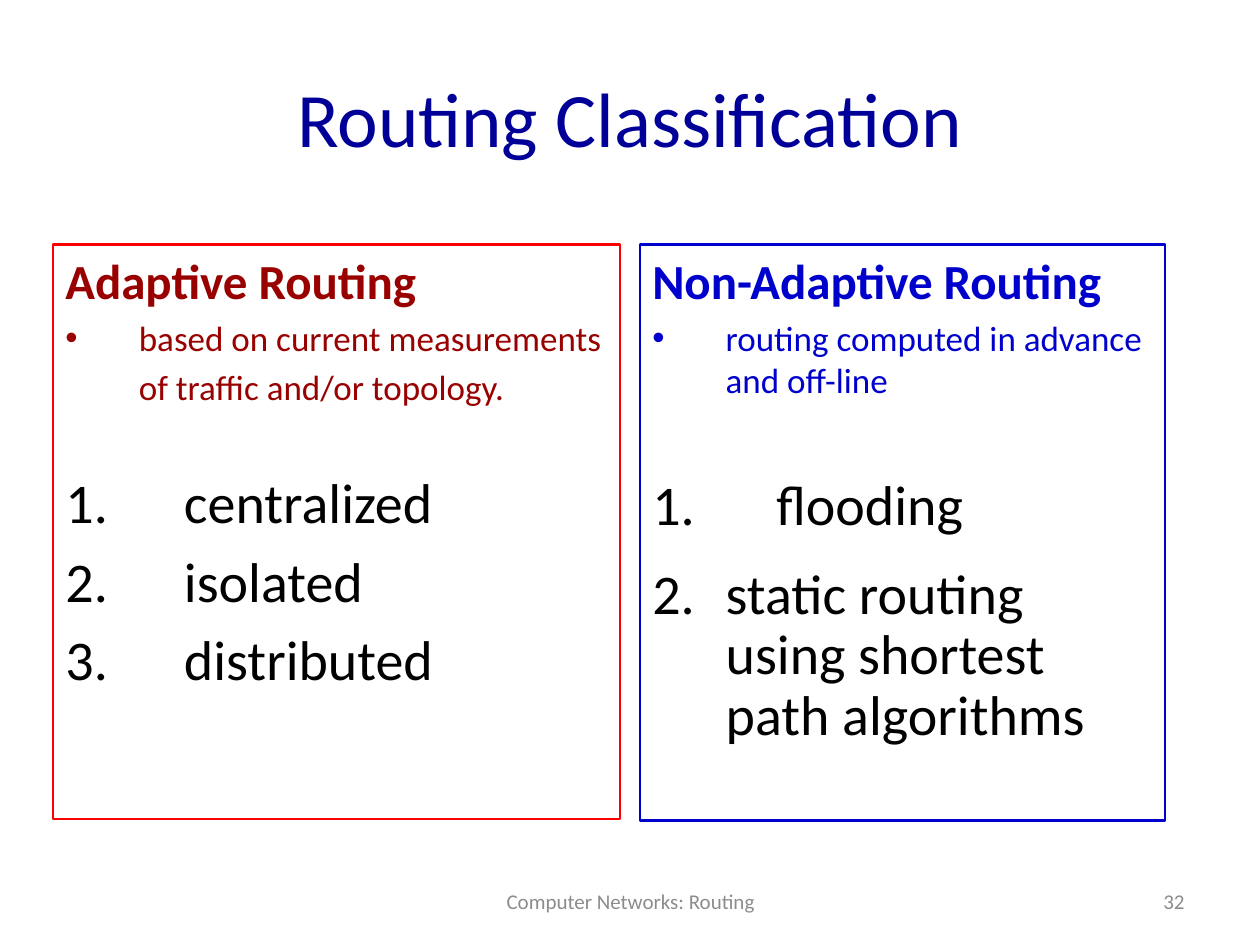
"""Build the Routing Classification slide with two outlined columns."""
from lxml import etree
from pptx import Presentation
from pptx.dml.color import RGBColor
from pptx.enum.shapes import MSO_SHAPE
from pptx.enum.text import MSO_ANCHOR, PP_ALIGN
from pptx.oxml.ns import qn
from pptx.util import Cm, Pt

RECTANGLE = MSO_SHAPE.RECTANGLE
TOP, MIDDLE = MSO_ANCHOR.TOP, MSO_ANCHOR.MIDDLE
LEFT, CENTER, RIGHT = PP_ALIGN.LEFT, PP_ALIGN.CENTER, PP_ALIGN.RIGHT
NAVY = RGBColor(0x00, 0x00, 0x99)
RED = RGBColor(0xFF, 0x00, 0x00)
DARK_RED = RGBColor(0x99, 0x00, 0x00)
BLUE = RGBColor(0x00, 0x00, 0xCC)
BLACK = RGBColor(0x00, 0x00, 0x00)
GRAY = RGBColor(0x8C, 0x8C, 0x8C)
INDENT = 1.48


def write(paragraph, text, size, color, bold=False, **layout):
    """Fill a paragraph with one run and apply its format values."""
    run = paragraph.add_run()
    run.text = text
    run.font.color.rgb = color
    for name, value in {"name": "Calibri", "size": Pt(size), "bold": bold}.items():
        setattr(run.font, name, value)
    for name, value in layout.items():
        setattr(paragraph, name, value)


def indent(paragraph, margin, bullet=None, number=None):
    """Give a paragraph a left margin and an optional hanging bullet or number."""
    properties = paragraph._p.get_or_add_pPr()
    properties.set("marL", str(Cm(margin)))
    properties.set("indent", str(-Cm(margin) if bullet or number else 0))
    if bullet:
        etree.SubElement(properties, qn("a:buFont"), typeface="Arial")
        etree.SubElement(properties, qn("a:buChar"), char=bullet)
    if number:
        etree.SubElement(properties, qn("a:buFont"), typeface="Calibri")
        etree.SubElement(properties, qn("a:buAutoNum"), type="arabicPeriod", startAt=str(number))


presentation = Presentation()
presentation.slide_width, presentation.slide_height = Cm(25.4), Cm(19.05)
slide = presentation.slides.add_slide(presentation.slide_layouts[5])

title = slide.shapes.title
for name, value in {"left": 1.27, "top": 0.76, "width": 22.86, "height": 3.18}.items():
    setattr(title, name, Cm(value))
title.text_frame.vertical_anchor = MIDDLE
write(title.text_frame.paragraphs[0], "Routing Classification", 44, NAVY, alignment=CENTER)

columns = [
    {
        "box": (1.07, 4.93, 11.43, 11.58), "line": RED, "color": DARK_RED,
        "heading": "Adaptive Routing",
        "notes": [("based on current measurements", "•"), ("of traffic and/or topology.", None)],
        "items": [("centralized", 2.39, 34.4), ("isolated", 2.39, 6.4), ("distributed", 2.39, 6.4)],
        "spacing": 1.0,
    },
    {
        "box": (12.9, 4.93, 10.59, 11.61), "line": BLUE, "color": BLUE,
        "heading": "Non-Adaptive Routing",
        "notes": [("routing computed in advance and off-line", "•")],
        "items": [("flooding", 2.5, 44), ("static routing using shortest path algorithms", INDENT, 16)],
        "spacing": 0.9,
    },
]

for column in columns:
    shape = slide.shapes.add_shape(RECTANGLE, *map(Cm, column["box"]))
    shape.shadow.inherit = False
    shape.fill.background()
    shape.line.color.rgb = column["line"]
    shape.line.width = Pt(1.5)
    frame = shape.text_frame
    frame.word_wrap = True
    frame.vertical_anchor = TOP
    write(frame.paragraphs[0], column["heading"], 28, column["color"], True, alignment=LEFT)
    for text, bullet in column["notes"]:
        paragraph = frame.add_paragraph()
        write(paragraph, text, 20, column["color"], alignment=LEFT, space_before=Pt(4))
        indent(paragraph, INDENT, bullet=bullet)
    for number, (text, margin, gap) in enumerate(column["items"], 1):
        paragraph = frame.add_paragraph()
        write(paragraph, text, 32, BLACK, alignment=LEFT,
              space_before=Pt(gap), line_spacing=column["spacing"])
        indent(paragraph, margin, number=number)

for text, left, width, alignment in [
    ("Computer Networks: Routing", 8.69, 8.05, CENTER),
    ("32", 18.21, 5.92, RIGHT),
]:
    box = slide.shapes.add_textbox(Cm(left), Cm(17.65), Cm(width), Cm(1.02))
    box.text_frame.word_wrap = True
    box.text_frame.vertical_anchor = MIDDLE
    write(box.text_frame.paragraphs[0], text, 12, GRAY, alignment=alignment)

presentation.save("out.pptx")
